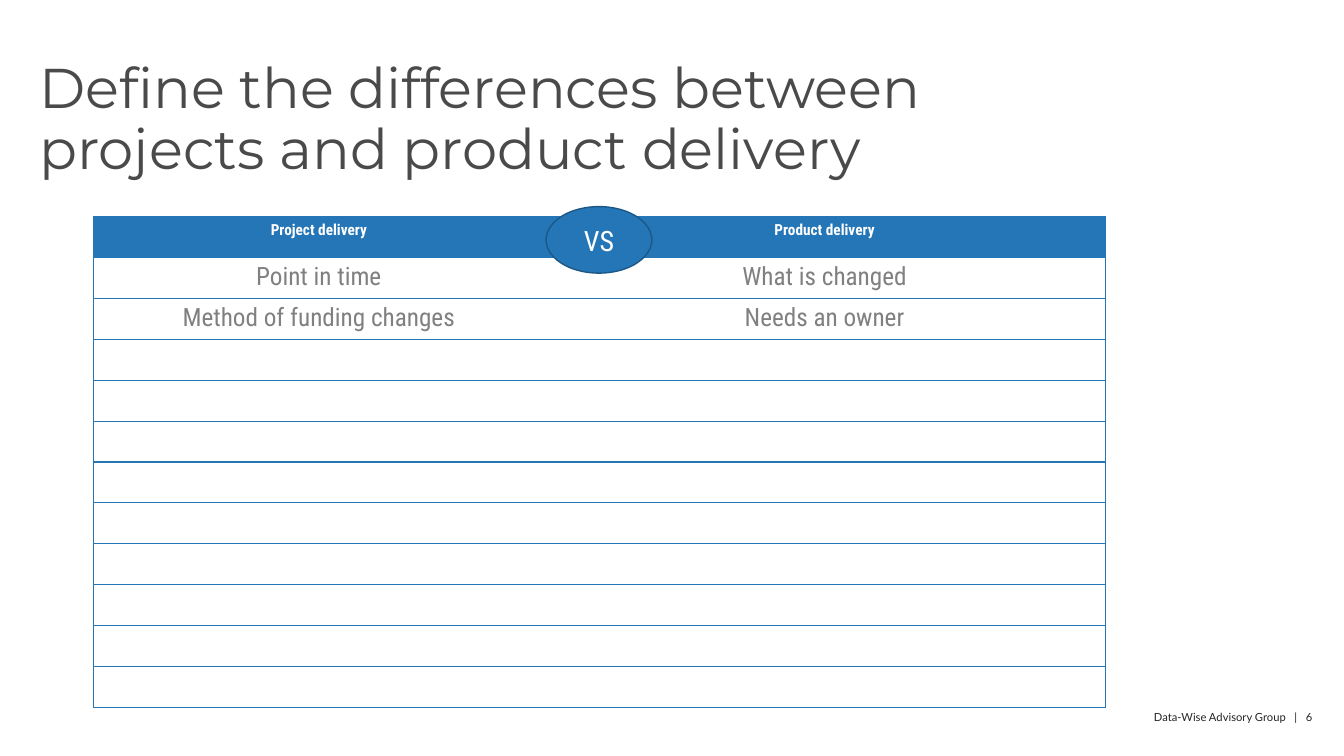
from lxml import etree
from pptx import Presentation
from pptx import util as u
from pptx.dml.color import RGBColor
from pptx.enum import shapes, text
from pptx.oxml import ns

PX = 9144
BLUE = "2576B7"
WHITE = "FFFFFF"


def tint(fill, color):
    fill.solid()
    fill.fore_color.rgb = RGBColor.from_string(color)


def write(frame, words, face, size, color, align, bold=False):
    para = frame.paragraphs[0]
    para.alignment = align
    run = para.add_run()
    run.text = words
    run.font.name = face
    run.font.size = u.Pt(size)
    run.font.bold = bold
    tint(run.font.fill, color)
    return para


deck = Presentation()
deck.slide_width, deck.slide_height = 1334 * PX, 750 * PX
slide = deck.slides.add_slide(deck.slide_layouts[5])
align = text.PP_ALIGN

title = slide.shapes.title
title.left, title.top, title.width, title.height = [n * PX for n in (39, 60, 980, 124)]
foot = slide.shapes.add_textbox(*[n * PX for n in (927, 705, 376, 13)])
for box in (title, foot):
    frame = box.text_frame
    frame.word_wrap = True
    frame.auto_size = text.MSO_AUTO_SIZE.NONE
    frame.vertical_anchor = text.MSO_ANCHOR.TOP
    frame.margin_left = frame.margin_top = frame.margin_right = frame.margin_bottom = 0
para = write(title.text_frame, "Define the differences between projects and product delivery",
             "Montserrat", 40, "4A4A4A", align.LEFT)
para.line_spacing = 0.9
write(foot.text_frame, "Data-Wise Advisory Group   |   6", "Lato", 8, "242424", align.RIGHT)

rows = [("Project delivery", "Product delivery"),
        ("Point in time", "What is changed"),
        ("Method of funding changes", "Needs an owner")]
rows += [("", "")] * 9
table = slide.shapes.add_table(len(rows), 2, *[n * PX for n in (93, 215, 1004, 487)]).table
table.first_row = table.horz_banding = False
for col, wide in zip(table.columns, (447, 557)):
    col.width = wide * PX
for r, row in enumerate(rows):
    table.rows[r].height = 487 * PX // len(rows)
    head = r == 0
    for c, words in enumerate(row):
        cell = table.cell(r, c)
        props = cell._tc.get_or_add_tcPr()
        for side in "LRTB":
            line = etree.SubElement(props, ns.qn("a:ln" + side), w=str(u.Pt(1)))
            if side == "LR"[1 - c]:
                etree.SubElement(line, ns.qn("a:noFill"))
            else:
                fill = etree.SubElement(line, ns.qn("a:solidFill"))
                etree.SubElement(fill, ns.qn("a:srgbClr"), val=BLUE)
        tint(cell.fill, BLUE if head else WHITE)
        if words:
            write(cell.text_frame, words, "Roboto Condensed", 10.9 if head else 18,
                  WHITE if head else "808080", align.CENTER, head)
        else:
            cell.text_frame.paragraphs[0].font.size = u.Pt(10)

badge = slide.shapes.add_shape(shapes.MSO_SHAPE.OVAL, *[n * PX for n in (542, 205, 105, 66)])
badge.shadow.inherit = False
tint(badge.fill, BLUE)
tint(badge.line.fill, "1B5787")
badge.line.width = u.Pt(1)
badge.text_frame.vertical_anchor = text.MSO_ANCHOR.MIDDLE
write(badge.text_frame, "VS", "Roboto Condensed", 20, WHITE, align.CENTER)

deck.save("out.pptx")
